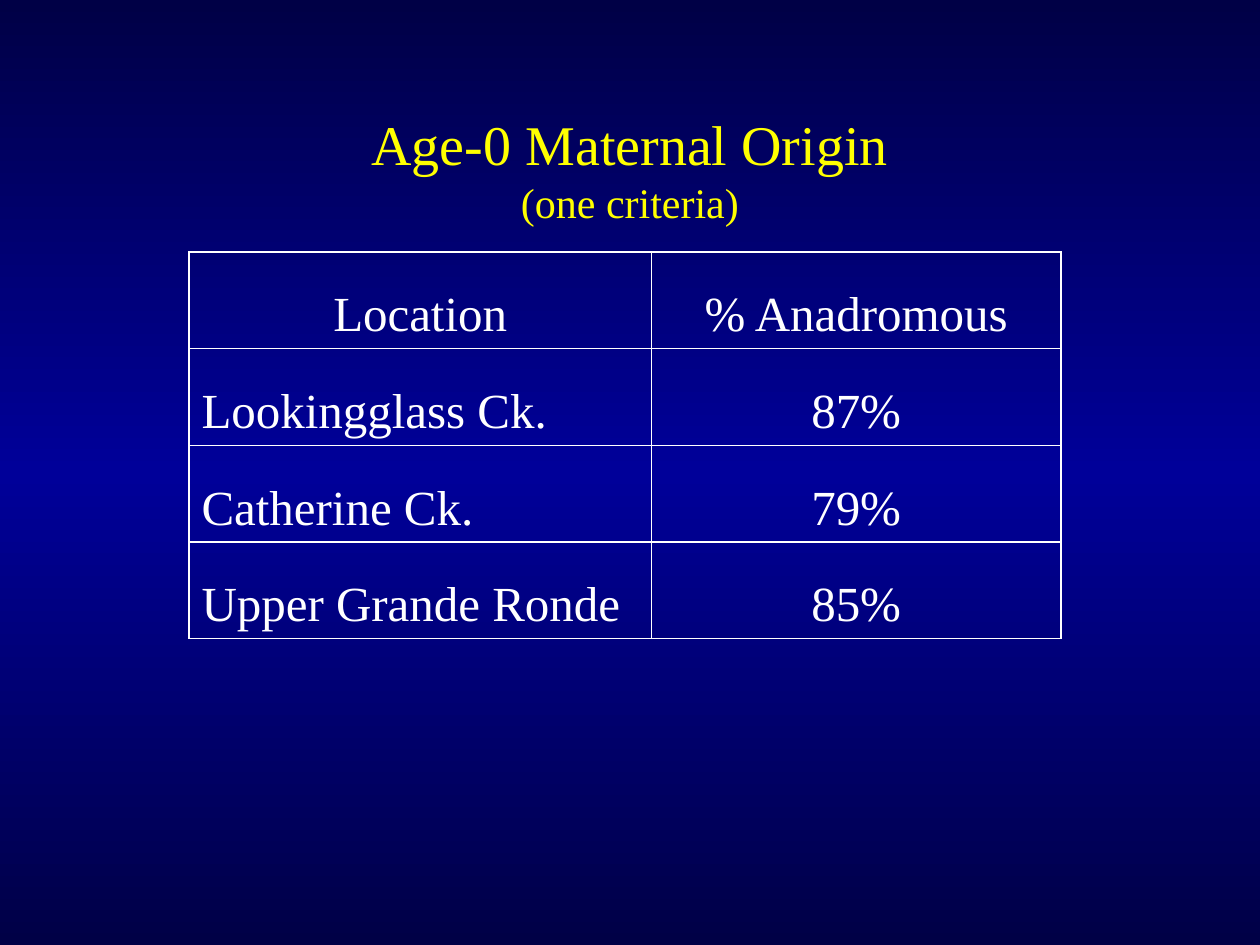
from copy import deepcopy

from lxml.etree import SubElement
from pptx import Presentation
from pptx.dml.color import RGBColor
from pptx.enum.text import MSO_ANCHOR, MSO_AUTO_SIZE, PP_ALIGN
from pptx.oxml.ns import qn
from pptx.util import Inches, Pt

COLORS = {"edge": "000046", "middle": "000099", "title": "FFFF00", "table": "FFFFFF"}
ROWS = [
    ("Location", "% Anadromous"),
    ("Lookingglass Ck.", "87%"),
    ("Catherine Ck.", "79%"),
    ("Upper Grande Ronde", "85%"),
]


class SlideBuilder:
    font = "Times New Roman"

    def __init__(self, deck):
        self.deck = deck
        self.page = deck.slides.add_slide(deck.slide_layouts[5])

    def place(self, left, top, width, height):
        """Turn shares of the slide's size into lengths."""
        across, down = self.deck.slide_width, self.deck.slide_height
        return (int(left * across), int(top * down),
                int(width * across), int(height * down))

    def style(self, span, size, color):
        span.font.name = self.font
        span.font.size = Pt(size)
        span.font.color.rgb = RGBColor.from_string(COLORS[color])

    def background(self, names):
        fill = self.page.background.fill
        fill.gradient()
        fill.gradient_angle = 270
        stop_list = self.page.element.find(".//" + qn("a:gsLst"))
        while len(stop_list) < len(names):
            stop_list.append(deepcopy(stop_list[0]))
        for index, (stop, name) in enumerate(zip(fill.gradient_stops, names)):
            stop.position = index / (len(names) - 1)
            stop.color.rgb = RGBColor.from_string(COLORS[name])

    def title(self, lines, sizes, area):
        box = self.page.shapes.title
        box.left, box.top, box.width, box.height = self.place(*area)
        frame = box.text_frame
        frame.auto_size = MSO_AUTO_SIZE.NONE
        frame.vertical_anchor = MSO_ANCHOR.MIDDLE
        para = frame.paragraphs[0]
        para.text = "\v".join(lines)
        para.alignment = PP_ALIGN.CENTER
        for span, size in zip(para.runs, sizes):
            self.style(span, size, "title")
        # The line break takes the size of the line it ends
        for line_break, size in zip(box.element.iter(qn("a:br")), sizes):
            SubElement(line_break, qn("a:rPr"), sz=str(size * 100))

    def table(self, rows, area, column_widths, size):
        frame = self.page.shapes.add_table(len(rows), len(rows[0]), *self.place(*area))
        grid = frame.table
        grid.first_row = grid.horz_banding = False
        for column, width in zip(grid.columns, column_widths):
            column.width = int(width * self.deck.slide_width)
        for row_index, row in enumerate(rows):
            for column_index, text in enumerate(row):
                cell = grid.cell(row_index, column_index)
                cell.text_frame.text = text
                cell.vertical_anchor = MSO_ANCHOR.BOTTOM
                para = cell.text_frame.paragraphs[0]
                para.space_before = Pt(size * 0.2)
                is_label = row_index > 0 and column_index == 0
                para.alignment = PP_ALIGN.LEFT if is_label else PP_ALIGN.CENTER
                self.style(para.runs[0], size, "table")
                self.borders(cell)
                cell.fill.background()

    def borders(self, cell):
        properties = cell._tc.get_or_add_tcPr()
        for side in ("a:lnL", "a:lnR", "a:lnT", "a:lnB"):
            line = SubElement(properties, qn(side), w=str(Pt(1)))
            solid = SubElement(line, qn("a:solidFill"))
            SubElement(solid, qn("a:srgbClr"), val=COLORS["table"])


def main():
    deck = Presentation()
    deck.slide_width, deck.slide_height = Inches(10), Inches(7.5)
    builder = SlideBuilder(deck)

    # Vertical gradient, brightest in the middle
    builder.background(["edge", "middle", "edge"])

    # Title with a smaller second line
    builder.title(["Age-0 Maternal Origin", "(one criteria)"], [32, 24],
                  (0.075, 0.92 / 7.5, 0.85, 0.83 / 7.5))

    # Share of anadromous mothers by location
    builder.table(ROWS, (0.15, 2 / 7.5, 0.692, 3.07 / 7.5), [0.367, 0.325], 28)

    deck.save("out.pptx")


if __name__ == "__main__":
    main()
